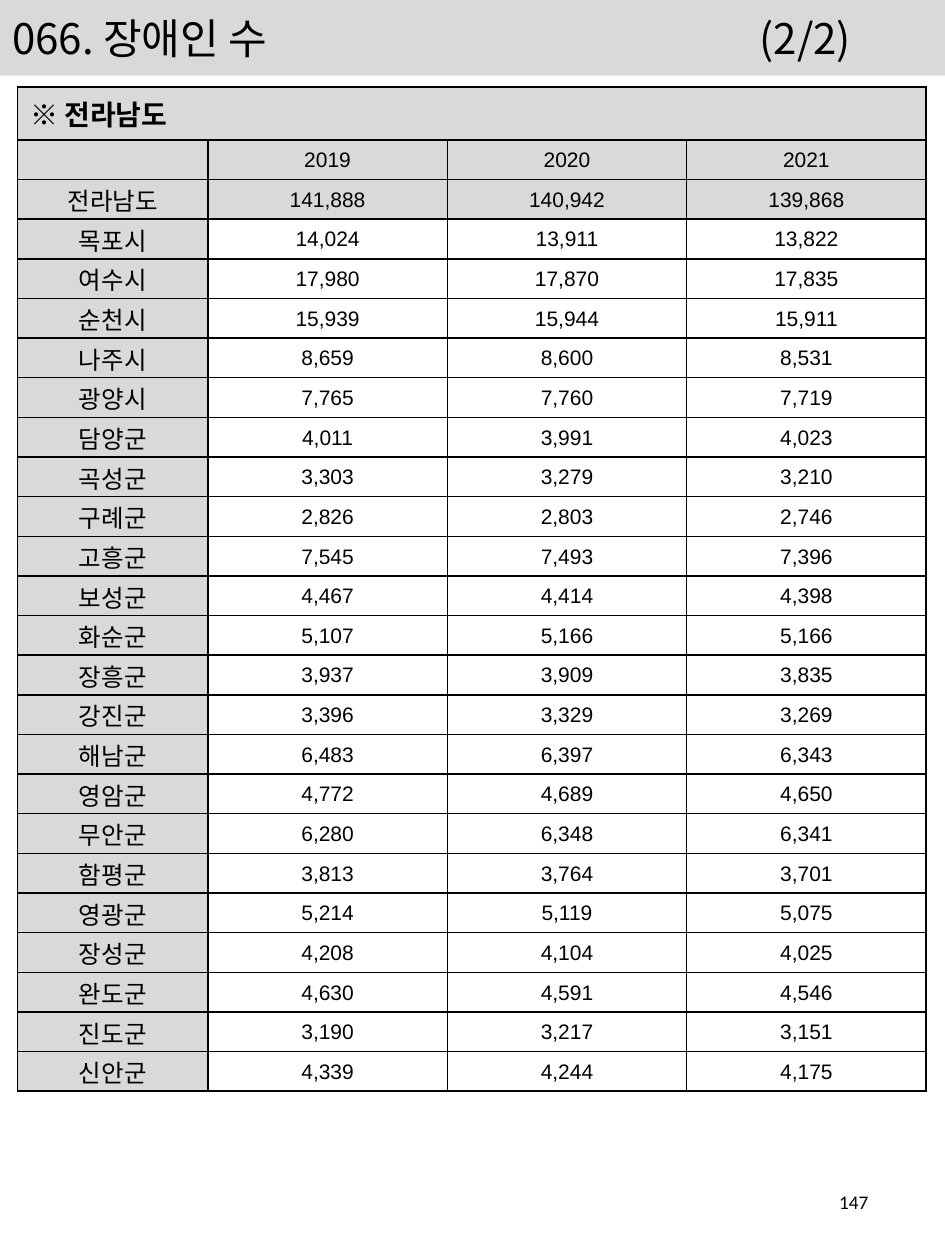
from dataclasses import dataclass

from lxml.etree import SubElement
from pptx import Presentation
from pptx.dml.color import RGBColor
from pptx.enum.shapes import MSO_SHAPE
from pptx.enum.text import MSO_ANCHOR, PP_ALIGN
from pptx.oxml.ns import qn
from pptx.util import Inches, Pt

GRAY, WHITE, BLACK = "D9D9D9", "FFFFFF", "000000"
KOREAN_FONT = "Noto Sans CJK KR"
YEARS = ("2019", "2020", "2021")
COLUMN_WIDTHS = (1.51, 1.9, 1.9, 1.9)


@dataclass(frozen=True)
class Region:
    name: str
    counts: tuple[int, int, int]


REGIONS = [
    Region("전라남도", (141888, 140942, 139868)),
    Region("목포시", (14024, 13911, 13822)),
    Region("여수시", (17980, 17870, 17835)),
    Region("순천시", (15939, 15944, 15911)),
    Region("나주시", (8659, 8600, 8531)),
    Region("광양시", (7765, 7760, 7719)),
    Region("담양군", (4011, 3991, 4023)),
    Region("곡성군", (3303, 3279, 3210)),
    Region("구례군", (2826, 2803, 2746)),
    Region("고흥군", (7545, 7493, 7396)),
    Region("보성군", (4467, 4414, 4398)),
    Region("화순군", (5107, 5166, 5166)),
    Region("장흥군", (3937, 3909, 3835)),
    Region("강진군", (3396, 3329, 3269)),
    Region("해남군", (6483, 6397, 6343)),
    Region("영암군", (4772, 4689, 4650)),
    Region("무안군", (6280, 6348, 6341)),
    Region("함평군", (3813, 3764, 3701)),
    Region("영광군", (5214, 5119, 5075)),
    Region("장성군", (4208, 4104, 4025)),
    Region("완도군", (4630, 4591, 4546)),
    Region("진도군", (3190, 3217, 3151)),
    Region("신안군", (4339, 4244, 4175)),
]


def color(value: str) -> RGBColor:
    return RGBColor.from_string(value)


def add_run(paragraph, text: str, size: float, font: str, bold: bool = False) -> None:
    run = paragraph.add_run()
    run.text = text
    run.font.size = Pt(size)
    run.font.name = font
    run.font.bold = bold
    run.font.color.rgb = color(BLACK)
    SubElement(run.font._element, qn("a:ea"), typeface=KOREAN_FONT)


def style_cell(cell, fill: str) -> None:
    """Give the cell thin black borders on all sides and a solid fill."""
    properties = cell._tc.get_or_add_tcPr()
    for side in ("lnL", "lnR", "lnT", "lnB"):
        line = SubElement(properties, qn(f"a:{side}"), w=str(Pt(1)))
        SubElement(SubElement(line, qn("a:solidFill")), qn("a:srgbClr"), val=BLACK)
    cell.fill.solid()
    cell.fill.fore_color.rgb = color(fill)


def fill_cell(cell, text: str, size: float, fill: str) -> None:
    style_cell(cell, fill)
    cell.vertical_anchor = MSO_ANCHOR.MIDDLE
    cell.margin_left = cell.margin_right = cell.margin_top = Inches(0.01)
    cell.margin_bottom = 0
    paragraph = cell.text_frame.paragraphs[0]
    paragraph.alignment = PP_ALIGN.CENTER
    if text:
        add_run(paragraph, text, size, "Arial")
    else:
        # An empty cell would otherwise take the default size and stretch its row
        SubElement(paragraph._p, qn("a:endParaRPr"), sz=str(size * 100))


def add_title_bar(slide) -> None:
    bar = slide.shapes.add_shape(MSO_SHAPE.RECTANGLE, 0, 0, Inches(7.5), Inches(0.6))
    bar.shadow.inherit = False
    bar.fill.solid()
    bar.fill.fore_color.rgb = color(GRAY)
    bar.line.fill.background()
    bar.text_frame.word_wrap = True
    bar.text_frame.vertical_anchor = MSO_ANCHOR.MIDDLE
    paragraph = bar.text_frame.paragraphs[0]
    paragraph.alignment = PP_ALIGN.LEFT
    tab_stops = SubElement(paragraph._p.get_or_add_pPr(), qn("a:tabLst"))
    SubElement(tab_stops, qn("a:tab"), pos=str(Inches(5.93)), algn="l")
    add_run(paragraph, "066. 장애인 수\t(2/2)", 24, KOREAN_FONT)


def add_region_table(slide) -> None:
    frame = slide.shapes.add_table(len(REGIONS) + 2, len(COLUMN_WIDTHS), Inches(0.14),
                                   Inches(0.69), Inches(7.21), Inches(7.87))
    table = frame.table
    table.first_row = table.horz_banding = False
    for column, width in zip(table.columns, COLUMN_WIDTHS):
        column.width = Inches(width)

    heading = table.cell(0, 0)
    heading.merge(table.cell(0, len(COLUMN_WIDTHS) - 1))
    for cell in table.rows[0].cells:
        style_cell(cell, GRAY)
    add_run(heading.text_frame.paragraphs[0], "※ 전라남도", 16, "Arial", bold=True)

    for column, text in enumerate(("", *YEARS)):
        fill_cell(table.cell(1, column), text, 12, GRAY)
    for row, region in enumerate(REGIONS, start=2):
        fill_cell(table.cell(row, 0), region.name, 14, GRAY)
        count_fill = GRAY if region is REGIONS[0] else WHITE
        for column, count in enumerate(region.counts, start=1):
            fill_cell(table.cell(row, column), f"{count:,}", 12, count_fill)


def add_page_number(slide) -> None:
    box = slide.shapes.add_textbox(Inches(5.3), Inches(9.27), Inches(1.69), Inches(0.53))
    box.text_frame.word_wrap = True
    box.text_frame.vertical_anchor = MSO_ANCHOR.MIDDLE
    paragraph = box.text_frame.paragraphs[0]
    paragraph.alignment = PP_ALIGN.RIGHT
    add_run(paragraph, "147", 11, "Calibri")


def main() -> None:
    presentation = Presentation()
    presentation.slide_width = Inches(7.5)
    presentation.slide_height = Inches(10)
    slide = presentation.slides.add_slide(presentation.slide_layouts[6])
    add_title_bar(slide)
    add_region_table(slide)
    add_page_number(slide)
    presentation.save("out.pptx")


if __name__ == "__main__":
    main()
